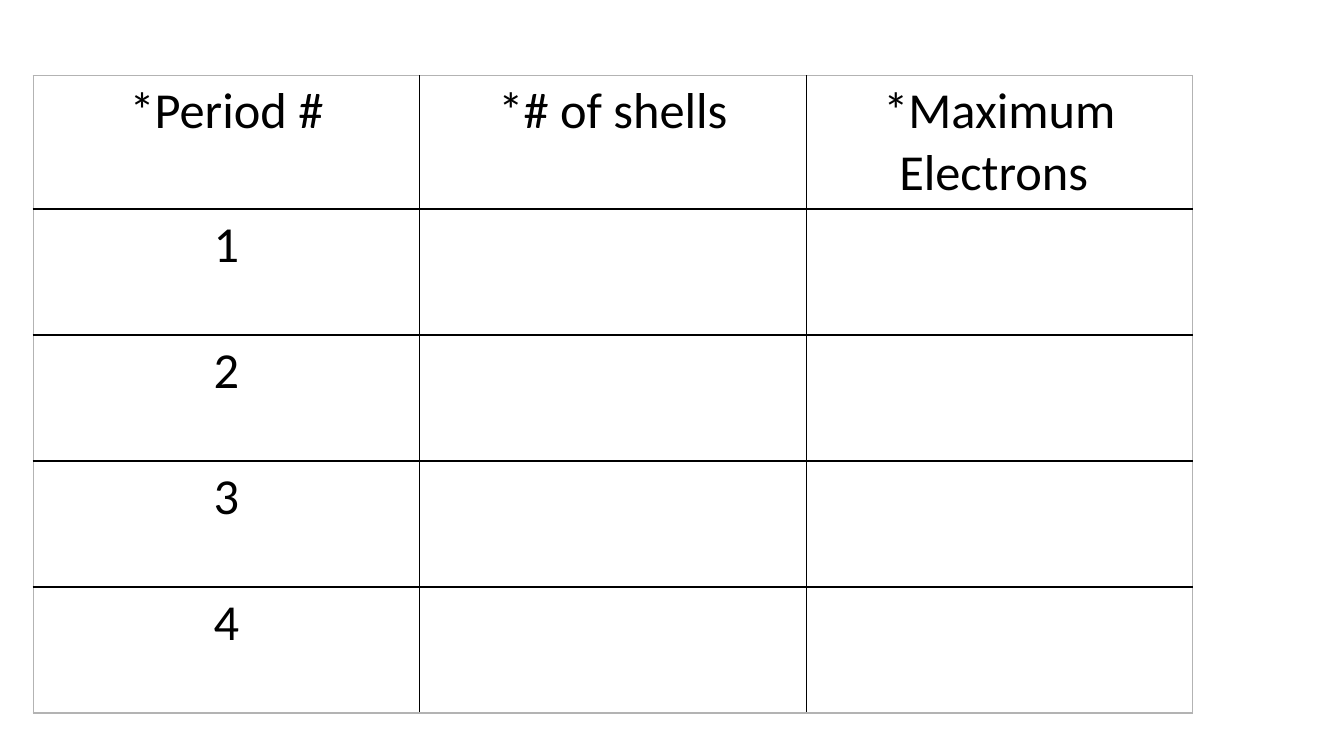
from lxml.etree import SubElement
from pptx import Presentation
from pptx.dml.color import RGBColor
from pptx.enum.text import PP_ALIGN
from pptx.oxml.ns import qn
from pptx.util import Inches, Pt

ROWS = [
    ["*Period #", "*# of shells", "*Maximum Electrons "],
    *[[str(period), "", ""] for period in range(1, 5)],
]
INNER, OUTER = "000000", "B3B3B3"


def rgb(value):
    """Turn a hex string into a colour."""
    return RGBColor.from_string(value)


def add_border(cell, side, color):
    """Draw a 1 pt line along one side of a cell."""
    ln = SubElement(cell._tc.get_or_add_tcPr(), qn(f"a:ln{side}"), w=str(Pt(1)))
    fill = SubElement(ln, qn("a:solidFill"))
    SubElement(fill, qn("a:srgbClr"), val=color)


def add_cell(cell, text, edges):
    """Fill in a cell; edges tells which sides lie on the table's outline."""
    for side in "LRTB":
        add_border(cell, side, OUTER if edges[side] else INNER)
    cell.fill.background()
    cell.text = text
    p = cell.text_frame.paragraphs[0]
    p.alignment = PP_ALIGN.CENTER
    p.font.name = "Calibri"
    p.font.size = Pt(36)
    p.font.bold = False
    p.font.color.rgb = rgb("000000")


def add_shell_table(s, left, top, width, height):
    """Place the table of periods, shells and electrons in the given box."""
    n_rows, n_cols = len(ROWS), len(ROWS[0])
    table = s.shapes.add_table(
        n_rows, n_cols, Inches(left), Inches(top), Inches(width), Inches(height)
    ).table
    table.first_row = table.horz_banding = False
    for i, row in enumerate(ROWS):
        for j, text in enumerate(row):
            edges = {"L": j == 0, "R": j == n_cols - 1,
                     "T": i == 0, "B": i == n_rows - 1}
            add_cell(table.cell(i, j), text, edges)


def main():
    """Build and save the presentation."""
    prs = Presentation()
    prs.slide_width, prs.slide_height = Inches(13.33), Inches(7.5)
    s = prs.slides.add_slide(prs.slide_layouts[6])
    add_shell_table(s, 0.33, 0.75, 11.5, 6.25)
    prs.save("out.pptx")


if __name__ == "__main__":
    main()
